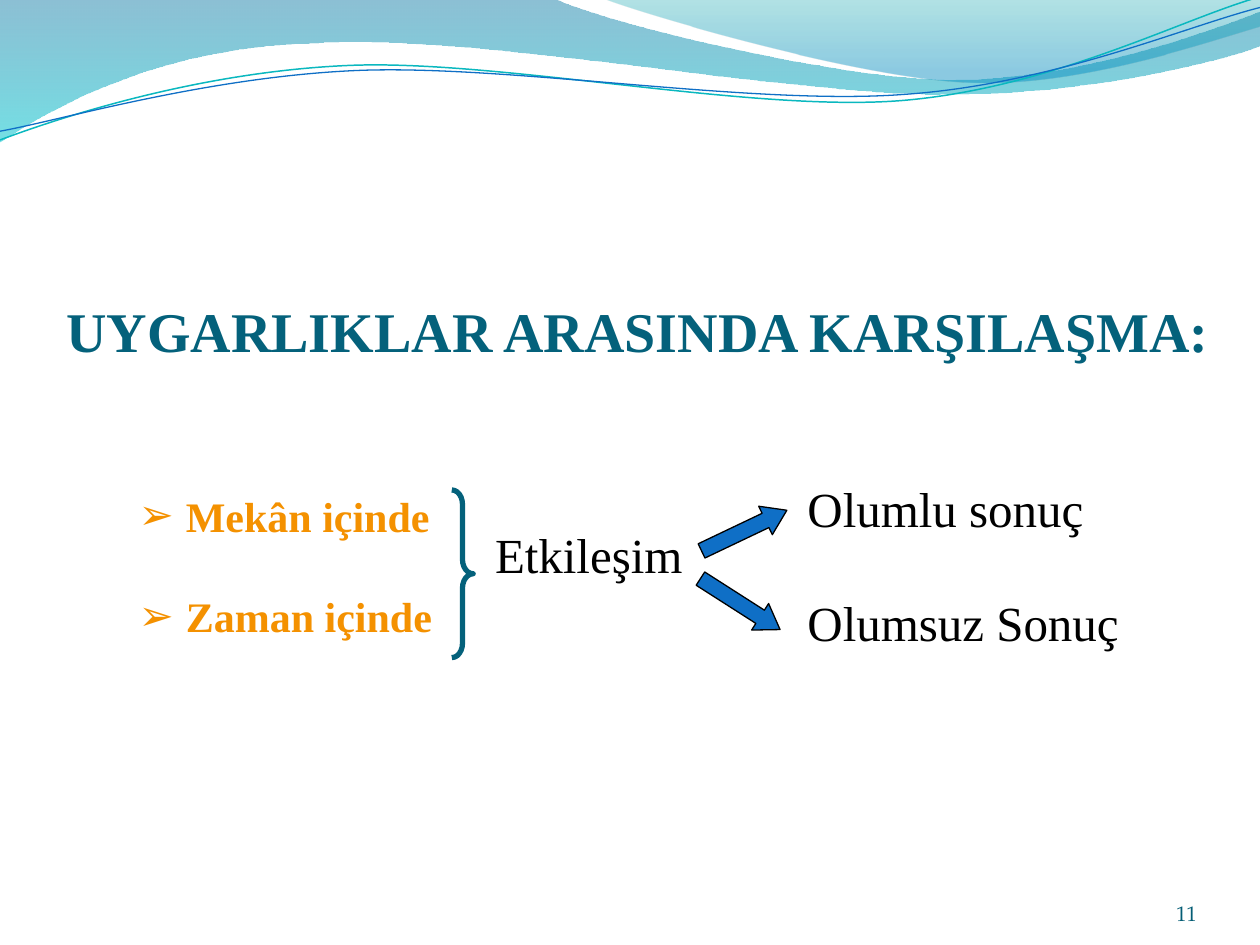
from dataclasses import dataclass
from math import cos, radians, sin

from lxml import etree
from pptx import Presentation
from pptx.dml.color import RGBColor
from pptx.enum.shapes import MSO_SHAPE
from pptx.enum.text import MSO_ANCHOR, MSO_AUTO_SIZE, PP_ALIGN
from pptx.oxml.ns import qn
from pptx.util import Pt

ARROW = MSO_SHAPE.RIGHT_ARROW
BRACE = MSO_SHAPE.RIGHT_BRACE
TOP, MIDDLE, BOTTOM = MSO_ANCHOR.TOP, MSO_ANCHOR.MIDDLE, MSO_ANCHOR.BOTTOM
LEFT, RIGHT = PP_ALIGN.LEFT, PP_ALIGN.RIGHT
NO_AUTOFIT = MSO_AUTO_SIZE.NONE


@dataclass(frozen=True)
class Theme:
    font: str = "Times New Roman"
    number_font: str = "TeX Gyre Pagella"
    title: str = "04617B"
    bullet: str = "F49100"
    text: str = "000000"
    number: str = "045D75"
    arrow: str = "0F6FC6"
    teal_line: str = "0AB8BF"
    band: tuple = ((0, "0074A1", 45), (1, "00C6CF", 55))
    crest: tuple = ((0, "00A1A9", 30), (0.8, "008BBF", 45))
    title_size: float = 32
    label_size: float = 28
    bullet_size: float = 24
    number_size: float = 12


def turn(point, center, degrees):
    x, y = point[0] - center[0], point[1] - center[1]
    angle = radians(degrees)
    return (center[0] + x * cos(angle) - y * sin(angle),
            center[1] + x * sin(angle) + y * cos(angle))


class SlideBuilder:
    def __init__(self, slide, theme):
        self.slide = slide
        self.theme = theme

    def place(self, shape, box):
        shape.left, shape.top, shape.width, shape.height = (Pt(v) for v in box)

    def format_text(self, frame, size, color, bold=False, font=None, align=LEFT):
        for paragraph in frame.paragraphs:
            paragraph.alignment = align
            for run in paragraph.runs:
                run.font.name = font or self.theme.font
                run.font.size = Pt(size)
                run.font.bold = bold
                run.font.color.rgb = RGBColor.from_string(color)

    def title(self, text, box):
        heading = self.slide.shapes.title
        self.place(heading, box)
        frame = heading.text_frame
        frame.text = text
        frame.auto_size = NO_AUTOFIT
        frame.word_wrap = False
        frame.vertical_anchor = MIDDLE
        self.format_text(frame, self.theme.title_size, self.theme.title, bold=True)

    def bullets(self, items, box, gap, indent):
        body = self.slide.placeholders[1]
        self.place(body, box)
        frame = body.text_frame
        frame.text = "\n".join(items)
        frame.auto_size = NO_AUTOFIT
        frame.vertical_anchor = TOP
        for index, paragraph in enumerate(frame.paragraphs):
            paragraph.space_before = Pt(gap if index else 0)
            properties = paragraph._p.get_or_add_pPr()
            properties.set("marL", str(Pt(indent)))
            properties.set("indent", str(Pt(-indent)))
            etree.SubElement(properties, qn("a:buChar")).set("char", "➢")
        self.format_text(frame, self.theme.bullet_size, self.theme.bullet, bold=True)

    def text_box(self, text, box):
        frame = self.slide.shapes.add_textbox(*(Pt(v) for v in box)).text_frame
        frame.text = text
        frame.word_wrap = True
        return frame

    def label(self, text, box):
        self.format_text(self.text_box(text, box), self.theme.label_size, self.theme.text)

    def page_number(self, text, box):
        frame = self.text_box(text, box)
        frame.margin_left = frame.margin_right = 0
        frame.margin_top = frame.margin_bottom = 0
        frame.vertical_anchor = BOTTOM
        self.format_text(frame, self.theme.number_size, self.theme.number,
                         font=self.theme.number_font, align=RIGHT)

    def preset(self, kind, box, adjustments, line, width, fill=None, rotation=0):
        shape = self.slide.shapes.add_shape(kind, *(Pt(v) for v in box))
        shape.shadow.inherit = False
        shape.rotation = rotation
        for index, value in enumerate(adjustments):
            shape.adjustments[index] = value
        if fill:
            shape.fill.solid()
            shape.fill.fore_color.rgb = RGBColor.from_string(fill)
        else:
            shape.fill.background()
        self.outline(shape, line, width)

    def outline(self, shape, color, width):
        shape.line.color.rgb = RGBColor.from_string(color)
        shape.line.width = Pt(width)

    def curve(self, start, segments, closed):
        points = [(Pt(x), Pt(y)) for segment in segments for x, y in segment]
        builder = self.slide.shapes.build_freeform(Pt(start[0]), Pt(start[1]))
        builder.add_line_segments(points, close=closed)
        shape = builder.convert_to_shape()
        shape.shadow.inherit = False
        steps = shape._element.spPr.iter(qn("a:lnTo"))
        strokes = iter(list(steps))
        for segment in segments:
            stroke = next(strokes)
            if len(segment) == 3:
                stroke.tag = qn("a:cubicBezTo")
                for _ in range(2):
                    control = next(strokes)
                    stroke.append(control[0])
                    control.getparent().remove(control)
        return shape

    def wave_fill(self, start, segments, stops):
        wave = self.curve(start, segments, True)
        wave.line.fill.background()
        wave.fill.gradient()
        wave.fill.gradient_angle = 270
        for stop, (position, color, _) in zip(wave.fill.gradient_stops, stops):
            stop.position = position
            stop.color.rgb = RGBColor.from_string(color)
        colors = wave._element.spPr.iter(qn("a:srgbClr"))
        for color, (_, _, opacity) in zip(colors, stops):
            etree.SubElement(color, qn("a:alpha")).set("val", str(opacity * 1000))

    def wave_line(self, start, segments, center, color, width, tilt=2.7):
        level = [[turn(point, center, tilt) for point in segment] for segment in segments]
        wave = self.curve(turn(start, center, tilt), level, False)
        wave.rotation = 360 - tilt
        wave.fill.background()
        self.outline(wave, color, width)


def main():
    theme = Theme()
    deck = Presentation()
    deck.slide_width, deck.slide_height = Pt(720), Pt(540)
    page = SlideBuilder(deck.slides.add_slide(deck.slide_layouts[1]), theme)

    page.wave_fill((0, 0), [
        ((316.8, -0.7),),
        ((342.7, 12.2), (478, 45.4), (545.8, 45.4)),
        ((614.2, 45.4), (689.8, 18.7), (720, 6.5)),
        ((720.7, 26),),
        ((707.8, 31.7), (626.4, 54.7), (537, 54)),
        ((447.8, 54), (275, 20.2), (185, 24.5)),
        ((93, 26), (33, 59.8), (-0.7, 81.4)),
    ], theme.band)
    page.wave_fill((345, -0.7), [
        ((366.5, 8), (491, 44.6), (553.7, 46.8)),
        ((616.3, 49.7), (692, 23), (720, 15)),
        ((720, 0),),
    ], theme.crest)
    page.wave_line((0, 80), [
        ((34.6, 67), (113.8, 41), (199.4, 37.4)),
        ((284.4, 33.8), (427, 64), (513.4, 57.6)),
        ((599.8, 51), (675.4, 10.8), (718.6, -1.4)),
    ], (359.3, 41.4), theme.teal_line, 0.85)
    page.wave_line((0, 75), [
        ((33.8, 69), (118, 44), (203.8, 40.3)),
        ((290.2, 36.7), (429.8, 60.5), (516.2, 54)),
        ((602, 48.2), (677.5, 15), (720, 4.3)),
    ], (359.6, 42.5), theme.arrow, 0.75)

    page.title("UYGARLIKLAR ARASINDA KARŞILAŞMA:", (30.6, 165.6, 674, 46))
    page.bullets(["Mekân içinde", "Zaman içinde"], (72, 276.5, 198.7, 94.3), 28.8, 27)
    page.preset(BRACE, (258.2, 280, 12.2, 95.8), (0.67, 0.5), theme.title, 3)
    for left, top, rotation in ((398.3, 294.2, 334.5), (396, 336.2, 32.6)):
        page.preset(ARROW, (left, top, 54, 18), (0.5, 0.75), theme.text, 0.75,
                    theme.arrow, rotation)
    for text, left, top, width in (
        ("Olumlu sonuç", 454.3, 270, 185.8),
        ("Etkileşim", 275.8, 296.3, 131.8),
        ("Olumsuz Sonuç", 454.3, 334.8, 193.7),
    ):
        page.label(text, (left, top, width, 41))
    page.page_number("11", (624.2, 500.4, 59.8, 28.8))

    deck.save("out.pptx")


if __name__ == "__main__":
    main()
